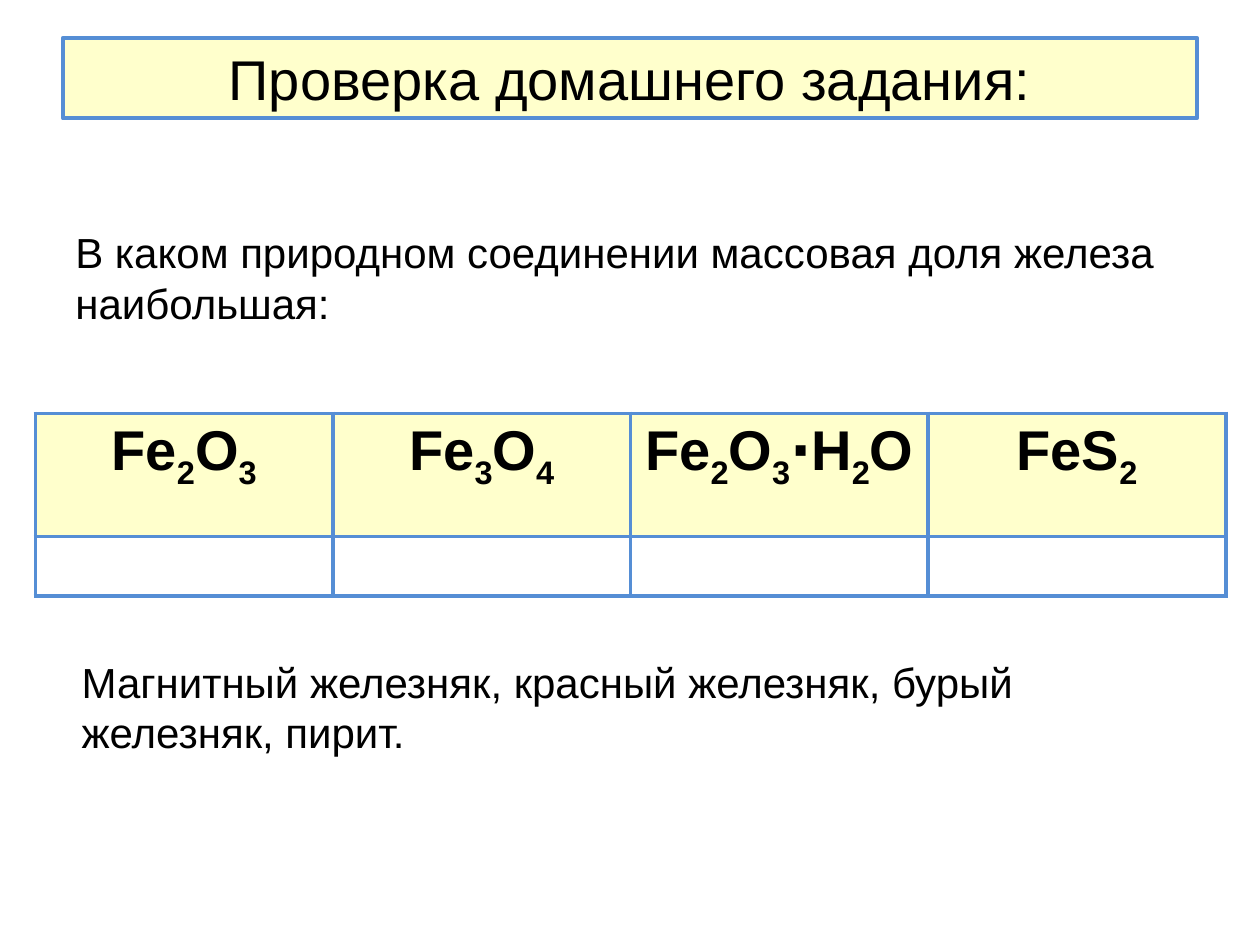
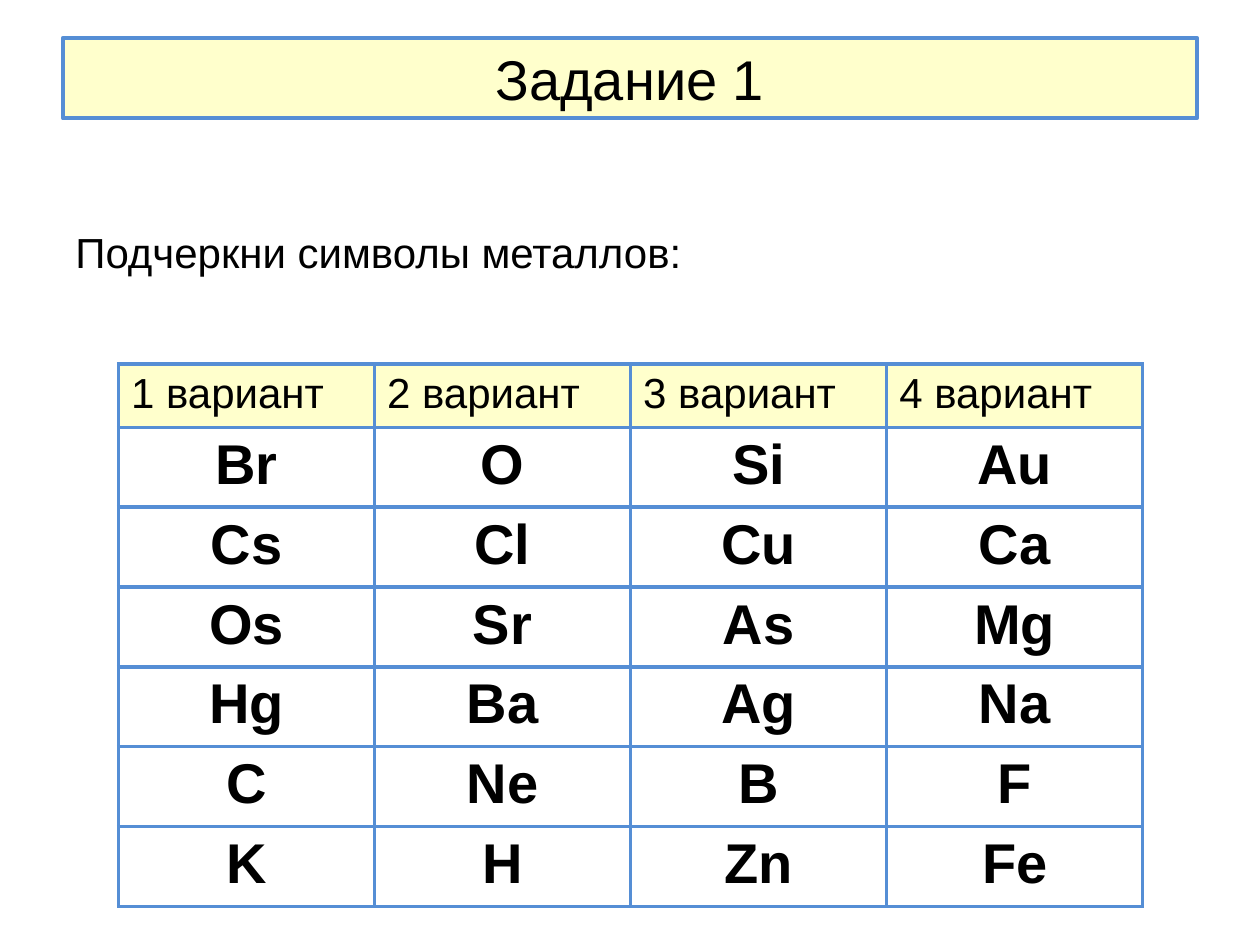
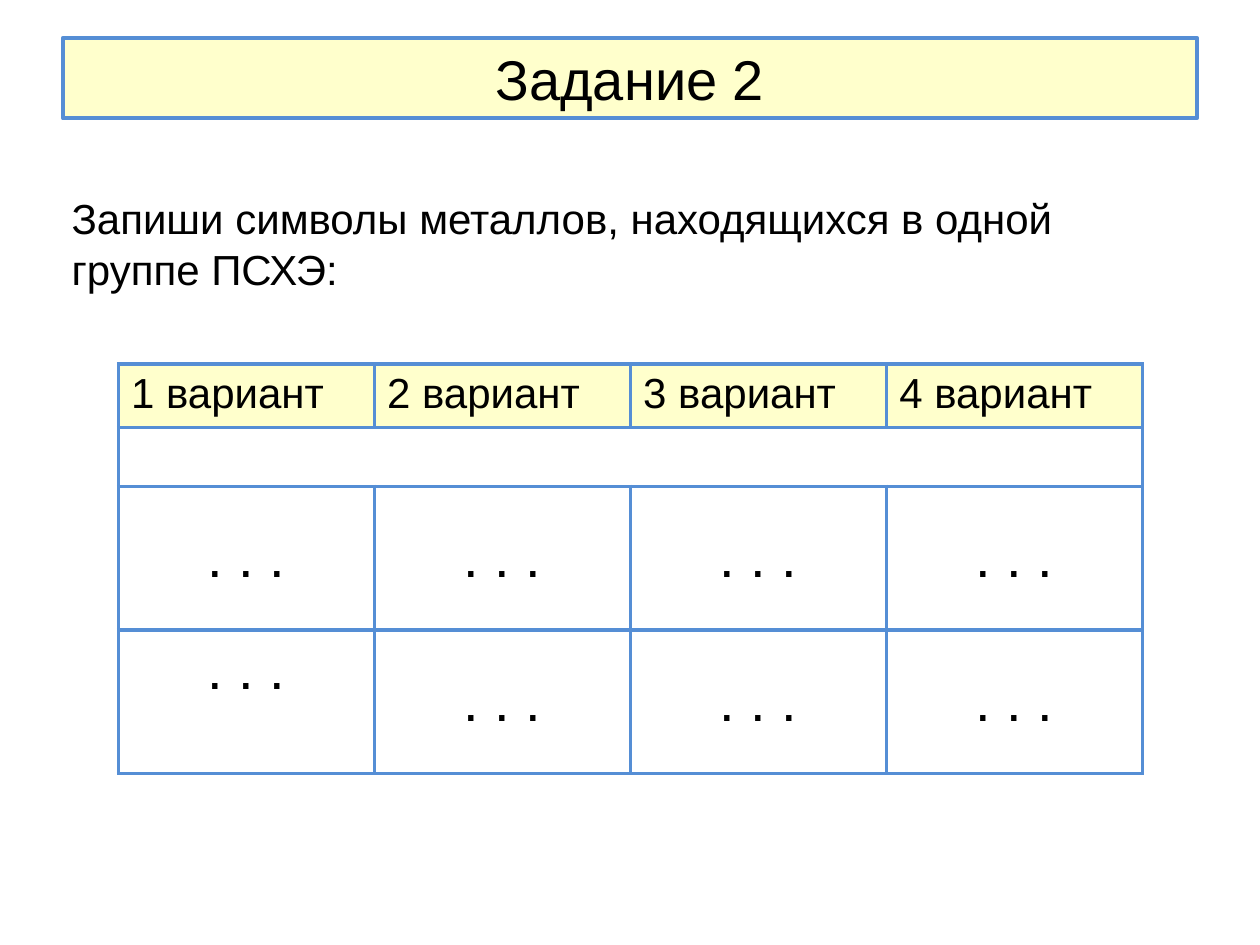
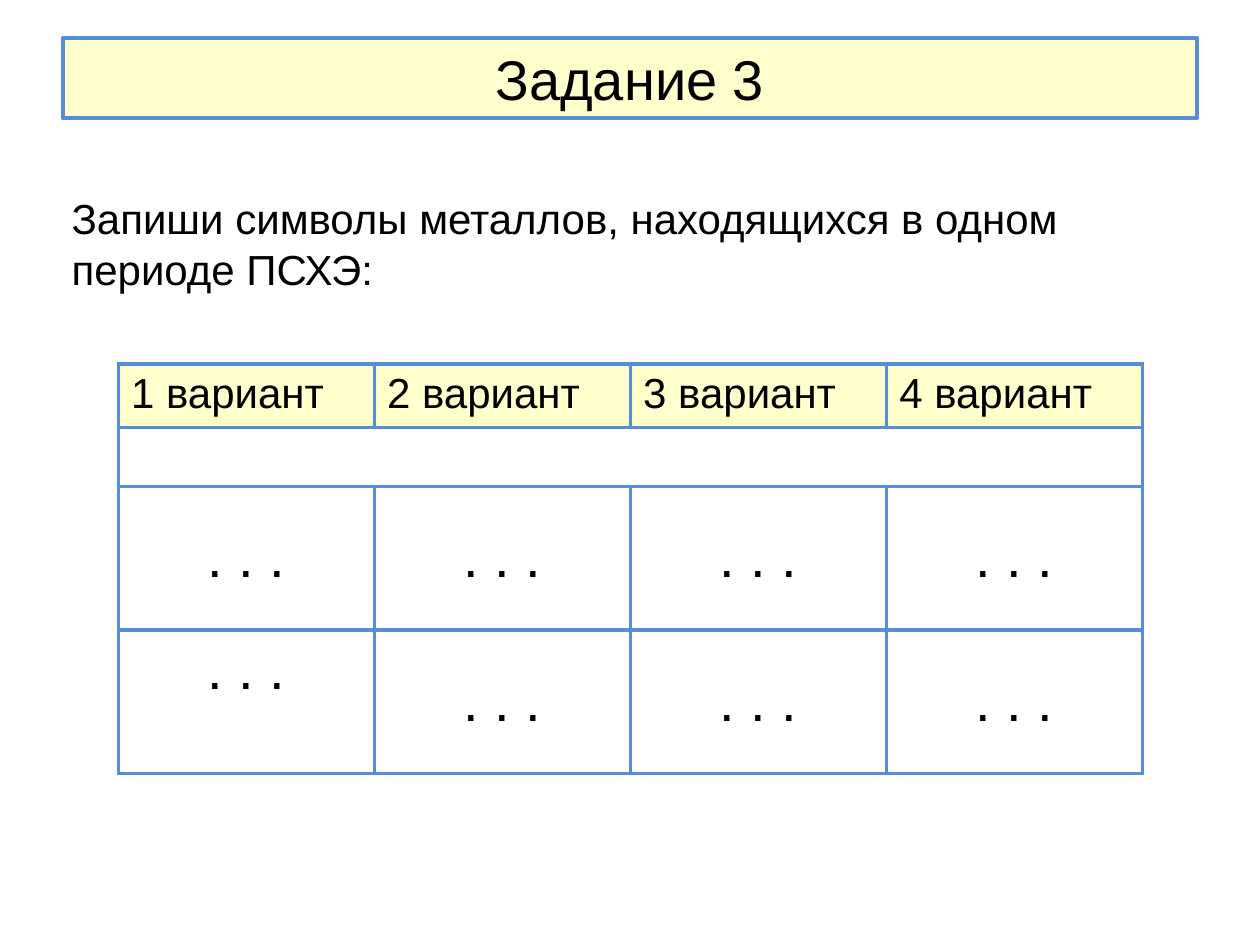
from itertools import groupby

from lxml.etree import SubElement as Sub
from pptx import Presentation
from pptx.dml.color import RGBColor
from pptx.enum.shapes import MSO_SHAPE as Shape
from pptx.enum.text import MSO_ANCHOR as Anchor, PP_ALIGN as Align
from pptx.oxml.ns import qn
from pptx.util import Inches, Pt

FONT = "Arial"
BLACK, CREAM, BLUE = "000000", "FFFFCC", "558ED5"
LINE = Pt(2.25)
HEADS = [f"{n} вариант" for n in range(1, 5)]
ROW = 0.47          # height of a row with 24 pt text
GRID = (0.94, 2.89, 8.13)


def color(code):
    return RGBColor.from_string(code)


def write(frame, text, size=24, bold=False, align=Align.LEFT,
          anchor=Anchor.TOP, formula=False):
    """Fill a text frame; in a formula the digits become subscripts."""
    frame.word_wrap = True
    frame.vertical_anchor = anchor
    para = frame.paragraphs[0]
    para.alignment = align
    parts = [text]
    if formula:
        parts = ["".join(part) for _, part in groupby(text, str.isdigit)]
    for part in parts:
        run = para.add_run()
        run.text = part
        font = run.font
        font.name, font.size, font.bold = FONT, Pt(size), bold
        font.color.rgb = color(BLACK)
        if formula and part.isdigit():
            run._r.get_or_add_rPr().set("baseline", "-25000")


def title(slide, text):
    box = slide.shapes.add_shape(Shape.RECTANGLE, Inches(0.5), Inches(0.3),
                                 Inches(9), Inches(0.64))
    box.shadow.inherit = False
    box.fill.solid()
    box.fill.fore_color.rgb = color(CREAM)
    box.line.color.rgb = color(BLUE)
    box.line.width = LINE
    write(box.text_frame, text, size=32, align=Align.CENTER, anchor=Anchor.MIDDLE)


def note(slide, text, left, top, height=0.98):
    box = slide.shapes.add_textbox(Inches(left), Inches(top),
                                   Inches(9), Inches(height))
    write(box.text_frame, text)


def border(cell):
    props = cell._tc.get_or_add_tcPr()
    for spot, side in enumerate(("lnL", "lnR", "lnT", "lnB")):
        edge = Sub(props, qn(f"a:{side}"), w=str(LINE))
        fill = Sub(edge, qn("a:solidFill"))
        Sub(fill, qn("a:srgbClr"), val=BLUE)
        props.insert(spot, edge)


def grid(slide, box, rows, heights, head, body):
    """Table with a cream first row; head and body are text formats."""
    left, top, width = box
    cols = len(rows[0])
    table = slide.shapes.add_table(
        len(rows), cols, Inches(left), Inches(top),
        Inches(width), Inches(sum(heights))).table
    table.first_row = table.horz_banding = False
    for col in table.columns:
        col.width = Inches(width / cols)
    for r, (texts, height) in enumerate(zip(rows, heights)):
        table.rows[r].height = Inches(height)
        for c, text in enumerate(texts):
            cell = table.cell(r, c)
            if r == 0:
                cell.fill.solid()
                cell.fill.fore_color.rgb = color(CREAM)
            else:
                cell.fill.background()
            border(cell)
            if text:
                form = dict(body if r else head)
                cell.vertical_anchor = form.pop("anchor", Anchor.TOP)
                write_cell(cell, text, form)
    return table


def write_cell(cell, text, form):
    anchor = cell.vertical_anchor
    write(cell.text_frame, text, **form)
    cell.vertical_anchor = anchor


# Slide types
def ores(slide):
    title(slide, "Проверка домашнего задания:")
    note(slide, "В каком природном соединении массовая доля железа наибольшая:",
         0.5, 1.75)
    rows = [["Fe2O3", "Fe3O4", "Fe2O3⋅H2O", "FeS2"], [""] * 4]
    head = dict(size=32, bold=True, align=Align.CENTER, formula=True)
    grid(slide, (0.28, 3.28, 9.45), rows, [0.98, ROW], head, {})
    note(slide, "Магнитный железняк, красный железняк, бурый железняк, пирит.",
         0.55, 5.16)


def metals(slide):
    title(slide, "Задание 1")
    note(slide, "Подчеркни символы металлов:", 0.5, 1.75, 0.67)
    signs = ["Br O Si Au", "Cs Cl Cu Ca", "Os Sr As Mg",
             "Hg Ba Ag Na", "C Ne B F", "K H Zn Fe"]
    rows = [HEADS] + [line.split() for line in signs]
    body = dict(size=32, bold=True, align=Align.CENTER)
    grid(slide, GRID, rows, [ROW] + [0.6] * len(signs), {}, body)


def blanks(slide, number, place):
    title(slide, f"Задание {number}")
    note(slide, f"Запиши символы металлов, находящихся в {place} ПСХЭ:",
         0.47, 1.48, 1.06)
    dots = [". . ."] * 4
    body = dict(size=32, align=Align.CENTER, anchor=Anchor.MIDDLE)
    table = grid(slide, GRID, [HEADS, [""] * 4, dots, dots],
                 [ROW, ROW, 1.14, 1.14], {}, body)
    table.cell(1, 0).merge(table.cell(1, 3))
    # The last row starts with raised dots
    table.cell(3, 0).margin_bottom = Inches(0.55)


def main():
    deck = Presentation()
    deck.slide_width, deck.slide_height = Inches(10), Inches(7.5)

    def page():
        return deck.slides.add_slide(deck.slide_layouts[6])

    ores(page())
    metals(page())
    blanks(page(), 2, "одной группе")
    blanks(page(), 3, "одном периоде")
    deck.save("out.pptx")


if __name__ == "__main__":
    main()
